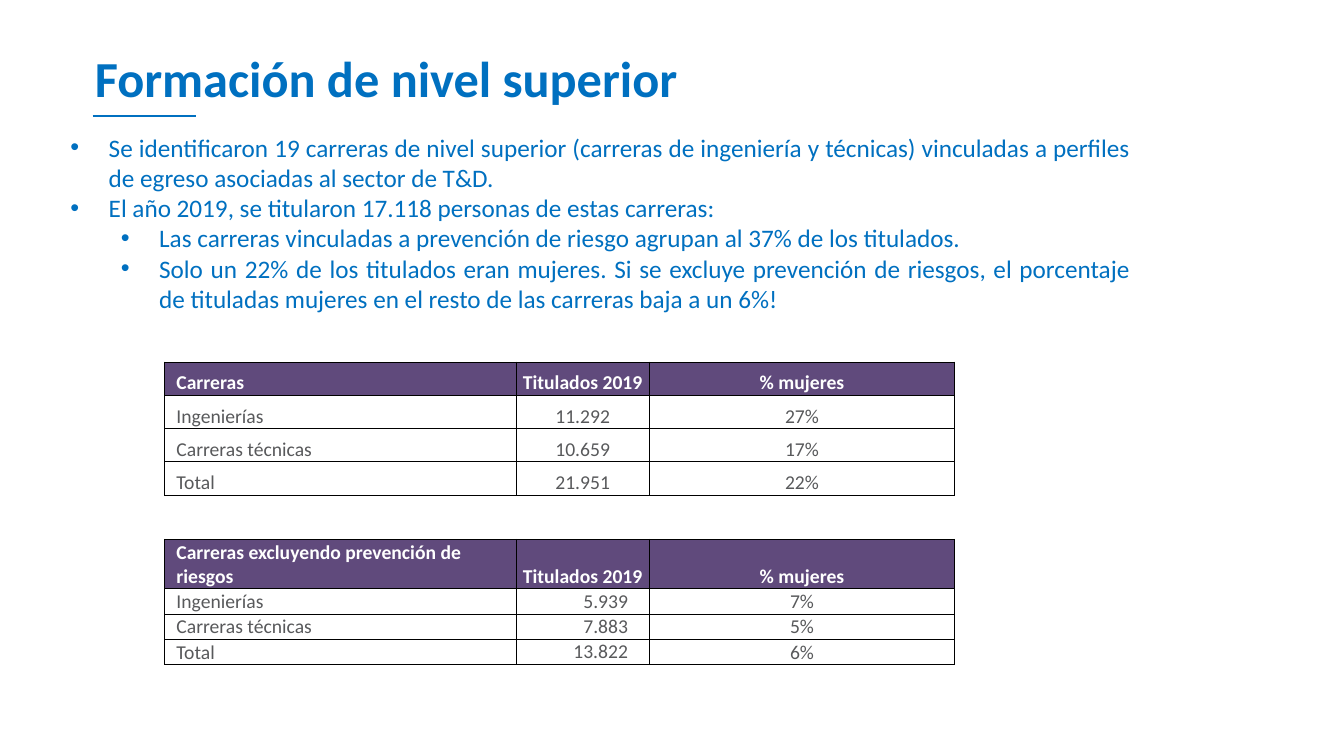
from lxml.etree import SubElement
from pptx import Presentation
from pptx.dml.color import RGBColor
from pptx.enum.shapes import MSO_CONNECTOR
from pptx.enum.text import MSO_ANCHOR, MSO_AUTO_SIZE, PP_ALIGN
from pptx.oxml import parse_xml
from pptx.oxml.ns import nsdecls, qn
from pptx.util import Inches, Pt

BLUE = RGBColor(0x00, 0x70, 0xC0)
PURPLE = RGBColor(0x60, 0x4A, 0x7C)
GRAY = RGBColor(0x58, 0x59, 0x5B)
WHITE = RGBColor(0xFF, 0xFF, 0xFF)

FINDINGS = [
    (0, "Se identificaron 19 carreras de nivel superior (carreras de ingeniería y técnicas) "
        "vinculadas a perfiles de egreso asociadas al sector de T&D."),
    (0, "El año 2019, se titularon 17.118 personas de estas carreras:"),
    (1, "Las carreras vinculadas a prevención de riesgo agrupan al 37% de los titulados."),
    (1, "Solo un 22% de los titulados eran mujeres. Si se excluye prevención de riesgos, "
        "el porcentaje de tituladas mujeres en el resto de las carreras baja a un 6%!"),
]
ALL_DEGREES = [
    ("Carreras", "Titulados 2019", "% mujeres"),
    ("Ingenierías", "11.292", "27%"),
    ("Carreras técnicas", "10.659", "17%"),
    ("Total", "21.951", "22%"),
]
WITHOUT_PREVENTION = [
    ("Carreras excluyendo prevención de riesgos", "Titulados 2019", "% mujeres"),
    ("Ingenierías", "5.939", "7%"),
    ("Carreras técnicas", "7.883", "5%"),
    ("Total", "13.822", "6%"),
]
COLUMN_WIDTHS = (3.49, 1.32, 3.03)


def write(paragraph, text, size=14, color=BLUE, bold=False, align=PP_ALIGN.LEFT):
    paragraph.text = text
    paragraph.alignment = align
    font = paragraph.font
    font.name = "Calibri"
    font.size = Pt(size)
    font.bold = bold
    font.color.rgb = color


def add_bullet(paragraph, level):
    paragraph.level = level
    properties = paragraph._p.get_or_add_pPr()
    properties.set("marL", str(Inches(0.38 + 0.5 * level)))
    properties.set("indent", str(Inches(-0.38)))
    SubElement(properties, qn("a:buFont"), typeface="Arial")
    SubElement(properties, qn("a:buChar"), char="•")


def add_borders(cell):
    properties = cell._tc.get_or_add_tcPr()
    for position, side in enumerate("LRTB"):
        properties.insert(position, parse_xml(
            f'<a:ln{side} {nsdecls("a")} w="{Pt(0.5)}"><a:solidFill>'
            f'<a:srgbClr val="000000"/></a:solidFill></a:ln{side}>'))


class SlideBuilder:
    def __init__(self, slide):
        self.slide = slide

    def title(self, text, left, top, width, height):
        title = self.slide.shapes.title
        title.left, title.top = Inches(left), Inches(top)
        title.width, title.height = Inches(width), Inches(height)
        title.fill.solid()
        title.fill.fore_color.rgb = WHITE
        frame = title.text_frame
        frame.word_wrap = False
        frame.auto_size = MSO_AUTO_SIZE.SHAPE_TO_FIT_TEXT
        write(frame.paragraphs[0], text, size=36, bold=True)

    def rule(self, left, right, top):
        rule = self.slide.shapes.add_connector(
            MSO_CONNECTOR.STRAIGHT, Inches(left), Inches(top), Inches(right), Inches(top))
        rule.line.color.rgb = BLUE
        rule.line.width = Pt(1.5)
        SubElement(rule._element.spPr, qn("a:effectLst"))

    def bullets(self, items, left, top, width, height):
        box = self.slide.shapes.add_textbox(
            Inches(left), Inches(top), Inches(width), Inches(height))
        frame = box.text_frame
        frame.word_wrap = True
        for index, (level, text) in enumerate(items):
            paragraph = frame.add_paragraph() if index else frame.paragraphs[0]
            add_bullet(paragraph, level)
            write(paragraph, text, size=18, align=PP_ALIGN.JUSTIFY)

    def table(self, rows, top, row_heights, right_aligned_counts=False):
        table = self.slide.shapes.add_table(
            len(rows), len(COLUMN_WIDTHS), Inches(1.63), Inches(top),
            Inches(sum(COLUMN_WIDTHS)), Inches(sum(row_heights))).table
        table.first_row = table.horz_banding = False
        for column, width in zip(table.columns, COLUMN_WIDTHS):
            column.width = Inches(width)
        for index, (row, height, values) in enumerate(zip(table.rows, row_heights, rows)):
            row.height = Inches(height)
            for column, (cell, value) in enumerate(zip(row.cells, values)):
                is_count = right_aligned_counts and index > 0 and column == 1
                self.cell(cell, value, index == 0, column == 0, is_count)

    def cell(self, cell, value, is_header, is_label, is_count):
        cell.margin_left = Inches(0.12 if is_label else 0.01)
        cell.margin_right = Inches(0.21 if is_count else 0.01)
        cell.margin_top, cell.margin_bottom = Inches(0.01), 0
        cell.vertical_anchor = MSO_ANCHOR.MIDDLE if is_count else MSO_ANCHOR.BOTTOM
        if is_header:
            cell.fill.solid()
            cell.fill.fore_color.rgb = PURPLE
        else:
            cell.fill.background()
        add_borders(cell)
        align = PP_ALIGN.LEFT if is_label else PP_ALIGN.RIGHT if is_count else PP_ALIGN.CENTER
        write(cell.text_frame.paragraphs[0], value, color=WHITE if is_header else GRAY,
              bold=is_header, align=align)


def main():
    presentation = Presentation()
    presentation.slide_width, presentation.slide_height = Inches(13.33), Inches(7.5)
    builder = SlideBuilder(presentation.slides.add_slide(presentation.slide_layouts[5]))
    builder.title("Formación de nivel superior", 0.84, 0.41, 6.05, 0.71)
    builder.rule(0.92, 1.94, 1.15)
    builder.bullets(FINDINGS, 0.6, 1.26, 10.71, 3.43)
    builder.table(ALL_DEGREES, 3.59, [0.33] * 4)
    builder.table(WITHOUT_PREVENTION, 5.35, [0.49] + [0.25] * 3, right_aligned_counts=True)
    presentation.save("out.pptx")


if __name__ == "__main__":
    main()
